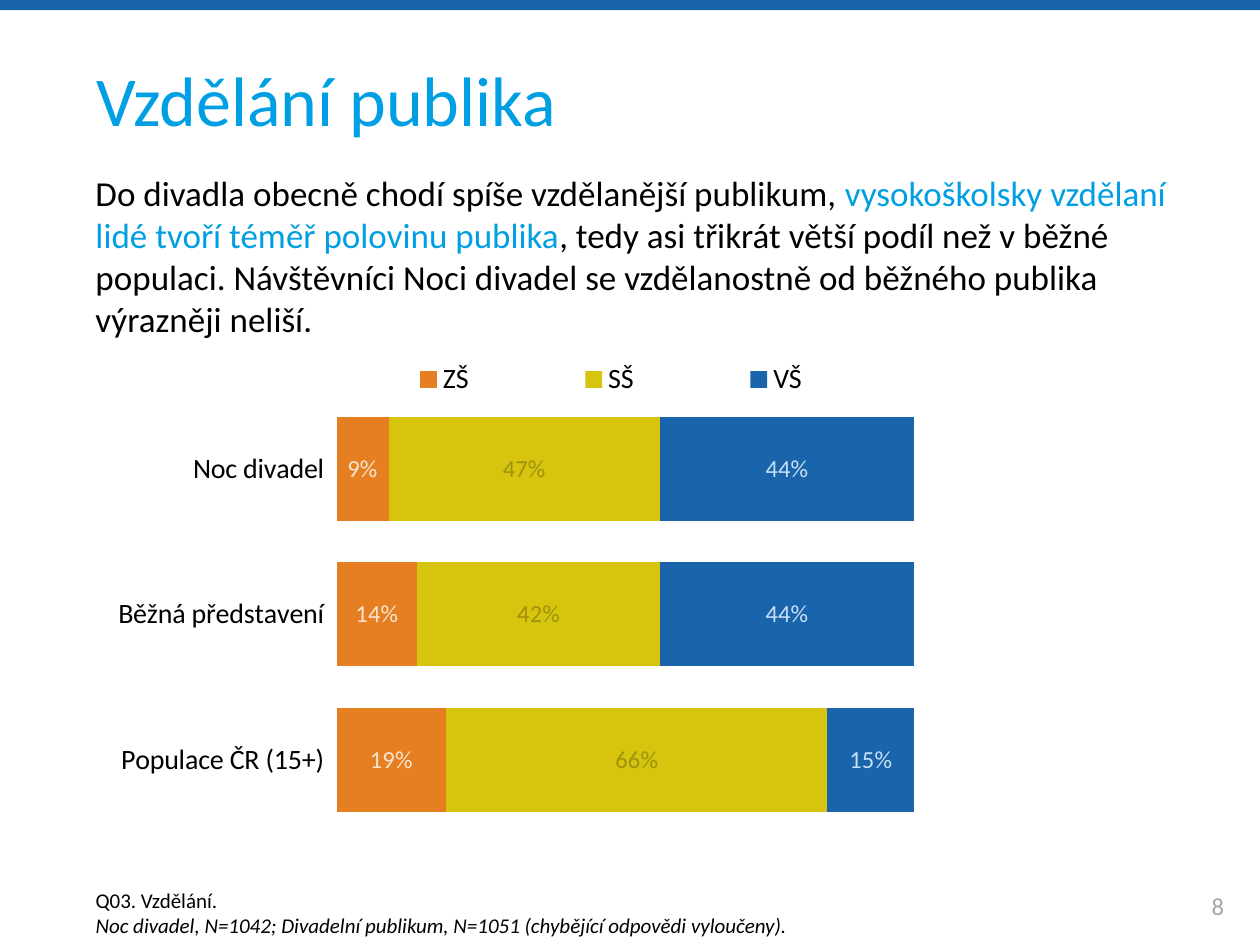
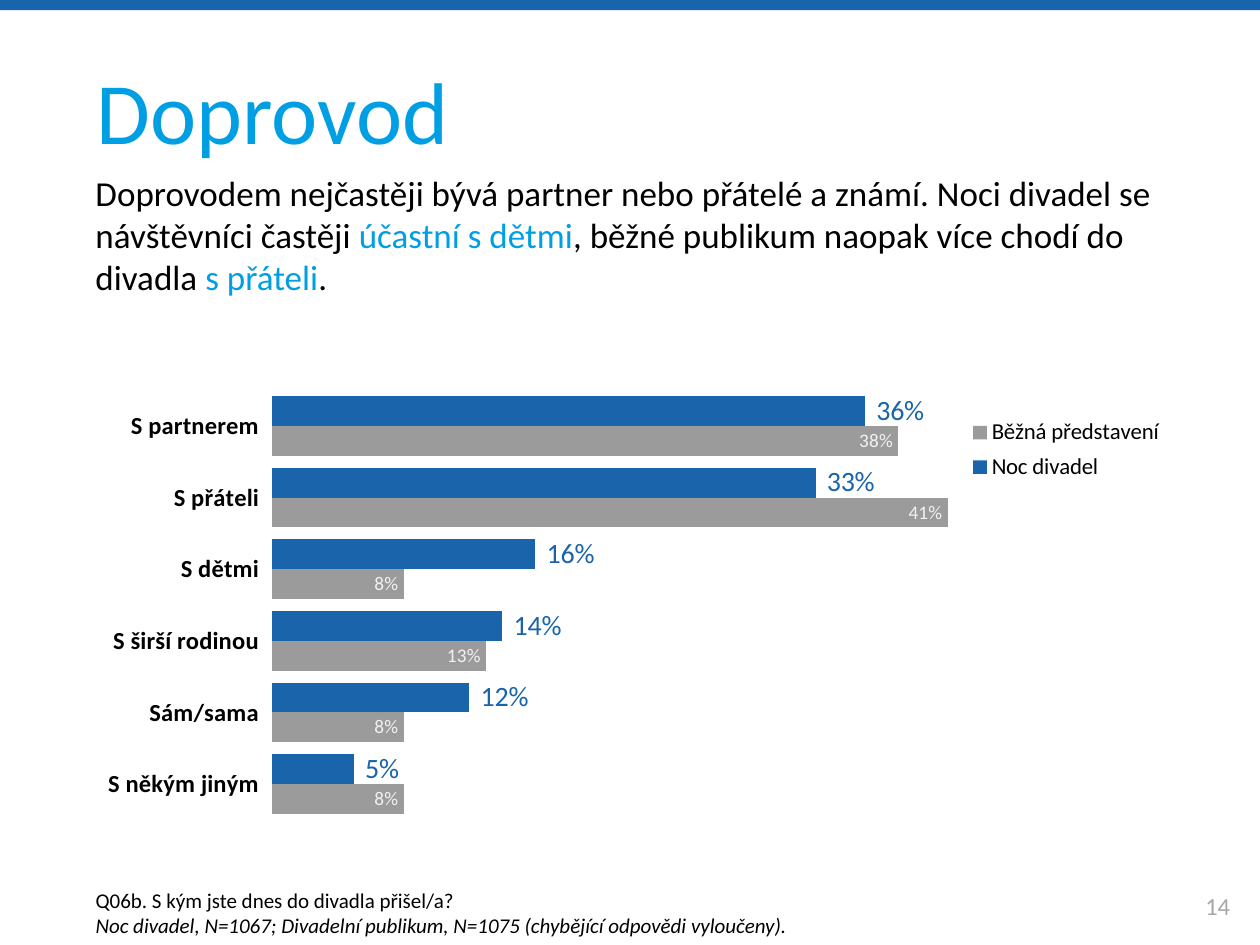
import pptx
import pptx.chart.data
import pptx.dml.color
import pptx.enum.chart
import pptx.enum.shapes
import pptx.enum.text
import pptx.oxml
import pptx.oxml.ns
import pptx.util

COLORS = {
    "band": "1964AA", "accent": "009FE3", "text": "000000", "number": "A6A6A6",
    "orange": "E67E22", "orange_label": "FAE5D3",
    "yellow": "D6C40F", "yellow_label": "A0930B",
    "blue": "1964AA", "blue_label": "C8E0F7",
    "gray": "9B9B9B", "gray_label": "F2F2F2",
}
FONT = "Calibri"
WIDTH, HEIGHT = 10, 7.5
MARGIN = 0.66
FOOTER_TOP = 6.99
PERCENT = "0%"
PERCENT_SPACED = r"[>0.015]\ 0%;;"
ChartType = pptx.enum.chart.XL_CHART_TYPE
LabelPosition = pptx.enum.chart.XL_LABEL_POSITION
Anchor = pptx.enum.text.MSO_ANCHOR

SLIDES = [
    {
        "title": "Vzdělání publika", "title_size": 40, "title_height": 0.82, "number": "8",
        "summary_height": 1.45,
        "summary": [
            ("Do divadla obecně chodí spíše vzdělanější publikum, ", "text"),
            ("vysokoškolsky vzdělaní lidé tvoří téměř polovinu publika", "accent"),
            (", tedy asi třikrát větší podíl než v běžné populaci. Návštěvníci Noci divadel "
             "se vzdělanostně od běžného publika výrazněji neliší.", "text"),
        ],
        "question": "Q03. Vzdělání.",
        "sample": "Noc divadel, N=1042; Divadelní publikum, N=1051 (chybějící odpovědi vyloučeny).",
        "footer_width": 5.75,
        "chart": {
            "type": ChartType.BAR_STACKED, "box": (0.67, 2.77, 7.64, 4.02),
            "plot": (0.262, 0.093, 0.72, 0.862), "legend": (0.237, 0.02, 0.62, 0.08),
            "maximum": 1.2, "overlap": 100,
            "category_size": 16, "category_bold": False, "legend_size": 16,
            "categories": ["Noc divadel", "Běžná představení", "Populace ČR (15+)"],
            "series": [
                ("ZŠ", (0.09, 0.14, 0.19), "orange", "orange_label", 14, PERCENT, LabelPosition.CENTER),
                ("SŠ", (0.47, 0.42, 0.66), "yellow", "yellow_label", 14, PERCENT, LabelPosition.CENTER),
                ("VŠ", (0.44, 0.44, 0.15), "blue", "blue_label", 14, PERCENT, LabelPosition.CENTER),
            ],
        },
    },
    {
        "title": "Doprovod", "title_size": 50, "title_height": 1.57, "number": "14",
        "summary_height": 1.11,
        "summary": [
            ("Doprovodem nejčastěji bývá partner nebo přátelé a známí. "
             "Noci divadel se návštěvníci častěji ", "text"),
            ("účastní s dětmi", "accent"),
            (", běžné publikum naopak více chodí do divadla", "text"),
            (" s přáteli", "accent"),
            (".", "text"),
        ],
        "question": "Q06b. S kým jste dnes do divadla přišel/a?",
        "sample": "Noc divadel, N=1067; Divadelní publikum, N=1075 (chybějící odpovědi vyloučeny).",
        "footer_width": 5.79,
        "chart": {
            "type": ChartType.BAR_CLUSTERED, "box": (0.71, 2.56, 8.66, 4.1),
            "plot": (0.167, 0.131, 0.68, 0.832), "legend": (0.8, 0.173, 0.19, 0.147),
            "maximum": 0.45, "overlap": 0,
            "category_size": 14, "category_bold": True, "legend_size": 13,
            "categories": ["S partnerem", "S přáteli", "S dětmi", "S širší rodinou",
                           "Sám/sama", "S někým jiným"],
            "series": [
                ("Noc divadel", (0.36, 0.33, 0.16, 0.14, 0.12, 0.05),
                 "blue", "blue", 16, PERCENT_SPACED, LabelPosition.OUTSIDE_END),
                ("Běžná představení", (0.38, 0.41, 0.08, 0.13, 0.08, 0.08),
                 "gray", "gray_label", 11, PERCENT_SPACED, LabelPosition.INSIDE_END),
            ],
        },
    },
]


def rgb(name):
    return pptx.dml.color.RGBColor.from_string(COLORS[name])


def inches(box):
    return [pptx.util.Inches(length) for length in box]


def style_font(font, size, color="text", bold=False, italic=False):
    font.name = FONT
    font.size = pptx.util.Pt(size)
    font.bold = bold
    font.italic = italic
    font.color.rgb = rgb(color)


def add_text(slide, box, paragraphs, size, anchor=Anchor.TOP, wrap=True, align=None):
    frame = slide.shapes.add_textbox(*inches(box)).text_frame
    frame.word_wrap = wrap
    frame.vertical_anchor = anchor
    for index, runs in enumerate(paragraphs):
        paragraph = frame.add_paragraph() if index else frame.paragraphs[0]
        paragraph.alignment = align
        for text, color, *italic in runs:
            run = paragraph.add_run()
            run.text = text
            style_font(run.font, size, color, italic=bool(italic))
    return frame


def place_part(part, shares, index, inner=False):
    for old_layout in part.findall(pptx.oxml.ns.qn("c:layout")):
        part.remove(old_layout)
    settings = [("layoutTarget", "inner")] if inner else []
    settings += [("xMode", "edge"), ("yMode", "edge"), *zip("xywh", shares)]
    body = "".join(f'<c:{tag} val="{value}"/>' for tag, value in settings)
    part.insert(index, pptx.oxml.parse_xml(
        f'<c:layout {pptx.oxml.ns.nsdecls("c")}><c:manualLayout>{body}</c:manualLayout></c:layout>'))


def add_bar_chart(slide, details):
    data = pptx.chart.data.CategoryChartData(number_format=PERCENT)
    data.categories = details["categories"]
    for name, values, *_ in details["series"]:
        data.add_series(name, values)
    chart = slide.shapes.add_chart(details["type"], *inches(details["box"]), data).chart
    chart.has_title = False
    style_font(chart.font, 10.5)

    category_axis = chart.category_axis
    category_axis.reverse_order = True
    category_axis.has_major_gridlines = False
    category_axis.format.line.fill.background()
    style_font(category_axis.tick_labels.font, details["category_size"], bold=details["category_bold"])
    value_axis = chart.value_axis
    value_axis.has_major_gridlines = False
    value_axis.minimum_scale = 0
    value_axis.maximum_scale = details["maximum"]
    value_axis.visible = False

    plot = chart.plots[0]
    plot.gap_width = 40
    plot.overlap = details["overlap"]
    plot.vary_by_categories = False
    for series, (_, _, fill, label_color, size, number_format, position) in zip(plot.series, details["series"]):
        series.format.fill.solid()
        series.format.fill.fore_color.rgb = rgb(fill)
        labels = series.data_labels
        labels.show_value = True
        labels.number_format = number_format
        labels.number_format_is_linked = False
        labels.position = position
        style_font(labels.font, size, label_color)

    chart.has_legend = True
    legend = chart.legend
    legend.position = pptx.enum.chart.XL_LEGEND_POSITION.TOP
    legend.include_in_layout = False
    style_font(legend.font, details["legend_size"])
    chart_space = chart.element
    place_part(chart_space.find(".//" + pptx.oxml.ns.qn("c:plotArea")), details["plot"], 0, inner=True)
    place_part(chart_space.find(".//" + pptx.oxml.ns.qn("c:legend")), details["legend"], 1)


def add_slide(presentation, content):
    slide = presentation.slides.add_slide(presentation.slide_layouts[6])
    band = slide.shapes.add_shape(
        pptx.enum.shapes.MSO_SHAPE.RECTANGLE, *inches((0, 0, WIDTH, 0.08)))
    band.shadow.inherit = False
    band.fill.solid()
    band.fill.fore_color.rgb = rgb("band")
    band.line.fill.background()

    add_text(slide, (0.67, 0.4, 8.66, content["title_height"]),
             [[(content["title"], "accent")]], content["title_size"])
    add_text(slide, (9.33, FOOTER_TOP, 0.67, 0.4), [[(content["number"], "number")]], 14,
             anchor=Anchor.MIDDLE, align=pptx.enum.text.PP_ALIGN.CENTER)
    add_bar_chart(slide, content["chart"])
    footer = add_text(slide, (MARGIN, FOOTER_TOP, content["footer_width"], 0.5),
                      [[(content["question"], "text")], [(content["sample"], "text", "italic")]],
                      12, anchor=Anchor.BOTTOM, wrap=False)
    summary = add_text(slide, (MARGIN, 1.31, 8.77, content["summary_height"]), [content["summary"]], 20)
    for frame in (footer, summary):
        frame.auto_size = pptx.enum.text.MSO_AUTO_SIZE.SHAPE_TO_FIT_TEXT


def main():
    presentation = pptx.Presentation()
    presentation.slide_width, presentation.slide_height = inches((WIDTH, HEIGHT))
    for content in SLIDES:
        add_slide(presentation, content)
    presentation.save("out.pptx")


if __name__ == "__main__":
    main()
